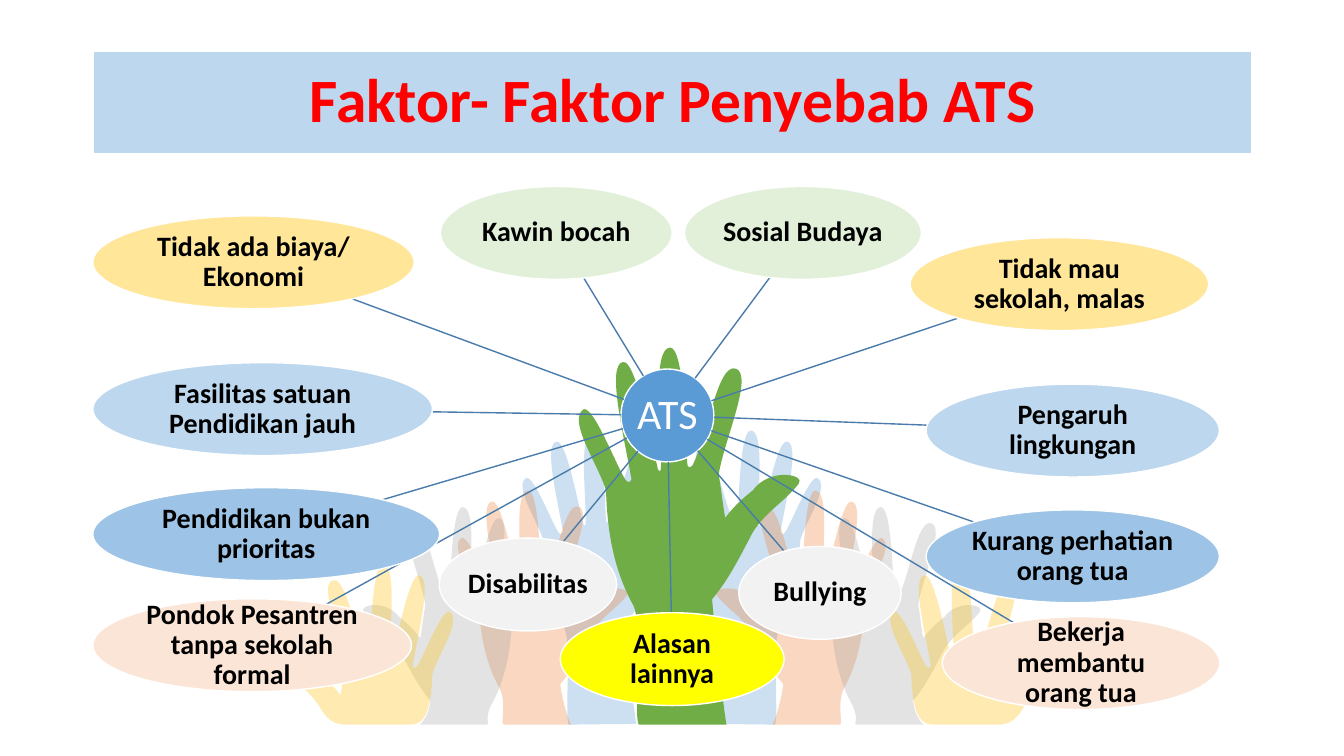
from math import hypot
from pptx import Presentation
from pptx.dml.color import RGBColor
from pptx.enum.shapes import MSO_CONNECTOR, MSO_SHAPE
from pptx.enum.text import MSO_ANCHOR, PP_ALIGN
from pptx.oxml.ns import qn
from pptx.util import Cm, Pt
from lxml import etree

WHITE = RGBColor(0xFF, 0xFF, 0xFF)
BLACK = RGBColor(0x00, 0x00, 0x00)
RED = RGBColor(0xFF, 0x00, 0x00)
BLUE = RGBColor(0x5B, 0x9B, 0xD5)
SKY = RGBColor(0xBD, 0xD7, 0xEE)
AZURE = RGBColor(0x9D, 0xC3, 0xE6)
STEEL = RGBColor(0x49, 0x7C, 0xAB)
GREEN = RGBColor(0x70, 0xAD, 0x47)
MINT = RGBColor(0xE2, 0xF0, 0xD9)
ORANGE = RGBColor(0xED, 0x7D, 0x31)
PEACH = RGBColor(0xFB, 0xE5, 0xD6)
GOLD = RGBColor(0xFF, 0xC0, 0x00)
CREAM = RGBColor(0xFF, 0xE6, 0x99)
YELLOW = RGBColor(0xFF, 0xFF, 0x00)
GRAY = RGBColor(0xA5, 0xA5, 0xA5)
PALE = RGBColor(0xF2, 0xF2, 0xF2)

deck = Presentation()
deck.slide_width, deck.slide_height = Cm(33.87), Cm(19.05)
slide = deck.slides.add_slide(deck.slide_layouts[6])
shapes = slide.shapes


def label(text, kind, x, y, w, h, fill, size=20, color=BLACK, bold=True, edge=1, inset=0.03):
    shape = shapes.add_shape(kind, Cm(x), Cm(y), Cm(w), Cm(h))
    shape.shadow.inherit = False
    shape.fill.solid()
    shape.fill.fore_color.rgb = fill
    shape.line.color.rgb = WHITE
    shape.line.width = Pt(edge)
    frame = shape.text_frame
    frame.word_wrap = True
    frame.vertical_anchor = MSO_ANCHOR.MIDDLE
    frame.margin_left = frame.margin_right = Cm(inset)
    frame.margin_top = frame.margin_bottom = Cm(inset)
    para = frame.paragraphs[0]
    para.alignment = PP_ALIGN.CENTER
    para.line_spacing = 0.9
    run = para.add_run()
    run.text = text
    run.font.name = "Calibri"
    run.font.size = Pt(size)
    run.font.bold = bold
    run.font.color.rgb = color


# Hand outline: start, then two controls and an end per curve,
# measured from the tip of the middle finger
OUTLINE = [
    (-24, 293),
    (-28, 283), (-21, 212), (-28, 197), (-43, 170), (-48, 141), (-49, 109),
    (-55, 89), (-79, 55), (-66, 47), (-58, 45), (-40, 93), (-34, 101),
    (-32, 105), (-28, 101), (-30, 98), (-35, 69), (-49, 13), (-36, 11),
    (-26, 9), (-14, 76), (-10, 90), (-10, 93), (-7, 99), (-7, 89),
    (-7, 62), (-14, 0), (0, 0), (11, 0), (12, 74), (13, 88),
    (13, 92), (15, 92), (17, 90), (29, 66), (36, 12), (50, 16),
    (64, 21), (41, 71), (37, 97), (39, 108), (40, 119), (42, 130),
    (47, 123), (54, 116), (63, 109), (76, 91), (104, 97), (98, 104),
    (87, 118), (73, 125), (63, 141), (53, 160), (44, 178), (32, 192),
    (33, 206), (41, 279), (43, 291),
]

# Hands: offset from the middle, top, turn, colour; each pair is mirrored
MID, FLOOR, UNIT = 16.93, 18.26, 0.0254
PAIRS = [(1.99, 10.85, -1, BLUE), (3.62, 12.36, -1, ORANGE),
         (5.27, 12.78, 1, GRAY), (7.28, 14.22, 1, GOLD)]
hands = [(MID + side * off, top, side * turn, UNIT, color, 30)
         for side in (1, -1) for off, top, turn, color in PAIRS]
hands.append((16.89, 8.76, 1, UNIT * 1.3, GREEN, 100))

for tip, top, turn, unit, color, alpha in hands:
    points = [(Cm(tip + turn * unit * x), Cm(min(top + unit * y, FLOOR))) for x, y in OUTLINE]
    pen = shapes.build_freeform(*points[0])
    pen.add_line_segments(points[3::3], close=True)
    hand = pen.convert_to_shape()
    hand.shadow.inherit = False
    hand.fill.solid()
    hand.fill.fore_color.rgb = color
    hand.line.fill.background()
    if alpha < 100:
        tone = hand.fill._xPr.find(".//" + qn("a:srgbClr"))
        etree.SubElement(tone, qn("a:alpha")).set("val", str(alpha * 1000))
    # Bend each straight segment with its two control points
    for n, part in enumerate(hand._element.findall(".//" + qn("a:lnTo"))):
        part.tag = qn("a:cubicBezTo")
        for spot in (0, 1):
            x, y = points[3 * n + 1 + spot]
            part.insert(spot, etree.Element(
                qn("a:pt"), x=str(x - hand.left), y=str(y - hand.top)))

# Title
label("Faktor- Faktor Penyebab ATS", MSO_SHAPE.RECTANGLE, 2.35, 1.28, 29.21, 2.6, SKY,
      size=44, color=RED, edge=1.5, inset=0.13)

# Hub
HIGH = 2.34
HUB_X, HUB_Y = 16.82, 10.47
label("ATS", MSO_SHAPE.OVAL, HUB_X - HIGH / 2, HUB_Y - HIGH / 2, HIGH, HIGH, BLUE,
      size=30, color=WHITE, bold=False, inset=0.05)

# Factors: text, left, top, width, fill
FACTORS = [
    ("Kawin bocah", 11.1, 4.7, 5.84, MINT),
    ("Sosial Budaya", 17.25, 4.7, 5.97, MINT),
    ("Pengaruh lingkungan", 23.34, 9.68, 7.39, SKY),
    ("Kurang perhatian orang tua", 23.34, 12.85, 7.39, AZURE),
    ("Bekerja membantu orang tua", 23.75, 15.54, 6.99, PEACH),
    ("Bullying", 18.62, 13.77, 4.09, PALE),
    ("Alasan lainnya", 14.12, 15.44, 5.64, YELLOW),
    ("Disabilitas", 11.07, 13.56, 4.47, PALE),
    ("Pondok Pesantren tanpa sekolah formal", 2.34, 15.09, 8.03, PEACH),
    ("Pendidikan bukan prioritas", 2.34, 12.29, 8.74, AZURE),
    ("Fasilitas satuan Pendidikan jauh", 2.34, 9.14, 8.56, SKY),
    ("Tidak ada biaya/ Ekonomi", 2.34, 5.44, 8.1, CREAM),
    ("Tidak mau sekolah, malas", 22.94, 5.99, 7.52, CREAM),
]
for text, x, y, wide, fill in FACTORS:
    # Spoke between the two outlines, along the line of centres
    dx, dy = x + wide / 2 - HUB_X, y + HIGH / 2 - HUB_Y
    near = HIGH / 2 / hypot(dx, dy)
    far = 1 - 1 / hypot(dx / (wide / 2), dy / (HIGH / 2))
    spoke = shapes.add_connector(
        MSO_CONNECTOR.STRAIGHT, Cm(HUB_X + near * dx), Cm(HUB_Y + near * dy),
        Cm(HUB_X + far * dx), Cm(HUB_Y + far * dy))
    spoke.line.color.rgb = STEEL
    spoke.line.width = Pt(1)
    etree.SubElement(spoke._element.spPr, qn("a:effectLst"))
    label(text, MSO_SHAPE.OVAL, x, y, wide, HIGH, fill)

deck.save("out.pptx")
